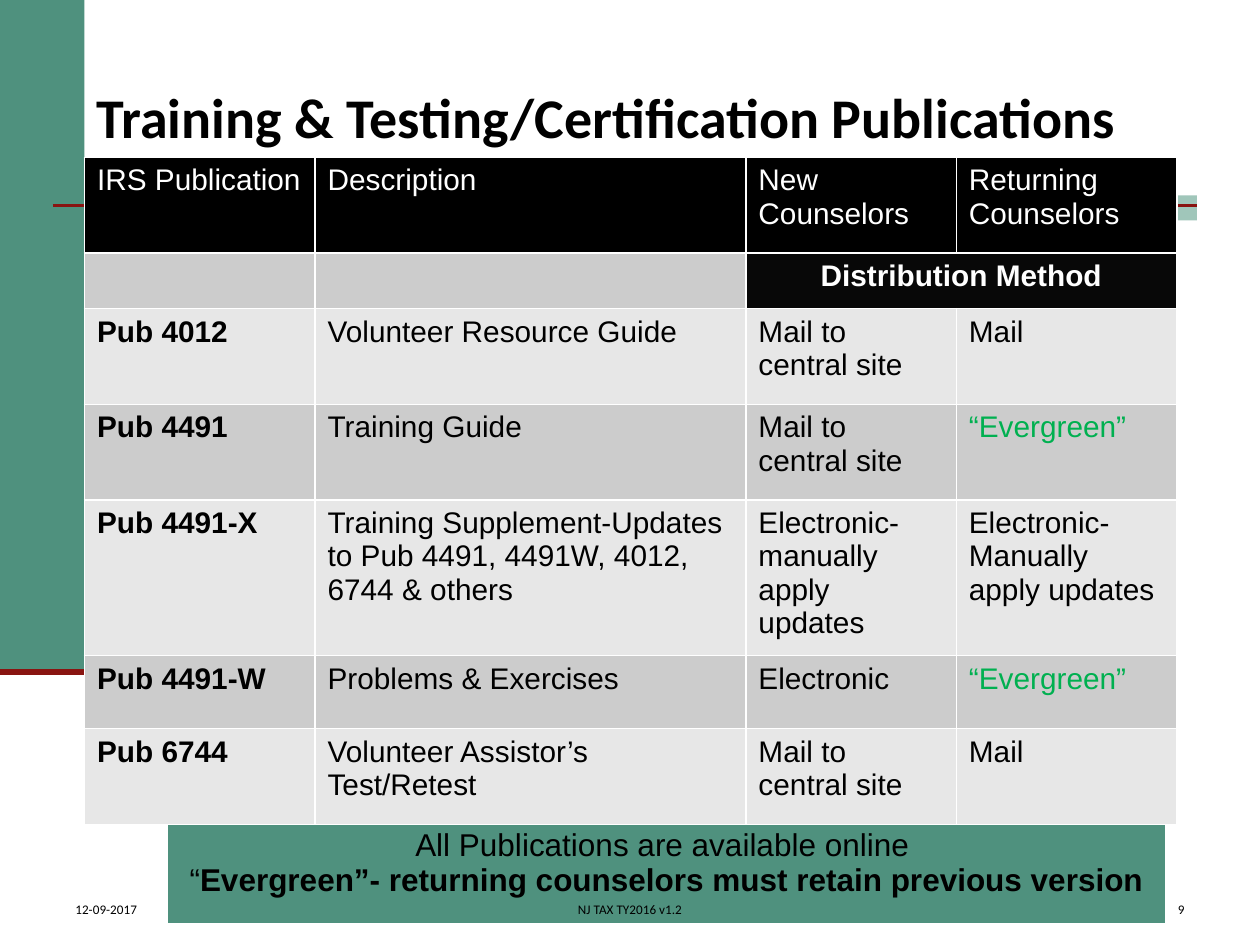
from lxml import etree
from pptx import Presentation
from pptx.dml.color import RGBColor
from pptx.enum.shapes import MSO_CONNECTOR, MSO_SHAPE
from pptx.enum.text import MSO_ANCHOR, PP_ALIGN
from pptx.oxml import parse_xml
from pptx.oxml.ns import nsdecls, qn
from pptx.util import Inches, Pt

LEFT, CENTER, RIGHT = PP_ALIGN.LEFT, PP_ALIGN.CENTER, PP_ALIGN.RIGHT
MIDDLE, BOTTOM = MSO_ANCHOR.MIDDLE, MSO_ANCHOR.BOTTOM
BLACK, WHITE, GREEN = "000000", "FFFFFF", "4F917E"
EVERGREEN, DARK_GRAY, LIGHT_GRAY = "00B050", "CCCCCC", "E7E7E7"


def color(value):
    return RGBColor.from_string(value)


def write(frame, lines, size, ink=BLACK, font="Arial", align=LEFT):
    """Each line is a list of (text, bold) runs."""
    frame.word_wrap = True
    for index, line in enumerate(lines):
        para = frame.paragraphs[0] if index == 0 else frame.add_paragraph()
        para.alignment = align
        for text, bold in line:
            span = para.add_run()
            span.text = text
            span.font.size, span.font.name, span.font.bold = Pt(size), font, bold
            span.font.color.rgb = color(ink)


deck = Presentation()
deck.slide_width, deck.slide_height = Inches(10), Inches(7.5)
page = deck.slides.add_slide(deck.slide_layouts[6])

# Side band and accent block
for left, top, width, height, fill in [
    (0, 0, 0.67, 5.33, GREEN),
    (7.5, 1.55, 2, 0.2, "A0C6BA"),
]:
    block = page.shapes.add_shape(
        MSO_SHAPE.RECTANGLE, Inches(left), Inches(top), Inches(width), Inches(height))
    block.shadow.inherit = False
    block.fill.solid()
    block.fill.fore_color.rgb = color(fill)
    block.line.fill.background()

# Red rules
for start, end, y, weight in [(0.42, 9.5, 1.63, 1.5), (0, 0.67, 5.33, 3.5)]:
    rule = page.shapes.add_connector(
        MSO_CONNECTOR.STRAIGHT, Inches(start), Inches(y), Inches(end), Inches(y))
    rule.line.color.rgb = color("891411")
    rule.line.width = Pt(weight)
    etree.SubElement(rule._element.spPr, qn("a:effectLst"))

# Title
title = page.shapes.add_textbox(Inches(0.67), Inches(0.3), Inches(8.83), Inches(1.25))
title.text_frame.vertical_anchor = MIDDLE
write(title.text_frame, [[("Training & Testing/Certification Publications", True)]],
      32, font="Calibri")

# Tables: the note below, then the publications
note = page.shapes.add_table(
    1, 1, Inches(1.33), Inches(6.52), Inches(7.92), Inches(0.81)).table
columns = [1.83, 3.42, 1.67, 1.75]
heights = [0.76, 0.44, 0.76, 0.76, 1.09, 0.58, 0.76]
grid = page.shapes.add_table(
    len(heights), len(columns), Inches(0.67), Inches(1.25),
    Inches(sum(columns)), Inches(sum(heights))).table
for column, width in zip(grid.columns, columns):
    column.width = Inches(width)
for row, height in zip(grid.rows, heights):
    row.height = Inches(height)

# White borders on every cell
for table in (note, grid):
    for cell in table.iter_cells():
        for side in ("lnL", "lnR", "lnT", "lnB"):
            cell._tc.get_or_add_tcPr().append(parse_xml(
                f'<a:{side} {nsdecls("a")} w="12700"><a:solidFill>'
                f'<a:srgbClr val="{WHITE}"/></a:solidFill></a:{side}>'))
        cell.fill.solid()
        cell.fill.fore_color.rgb = color(GREEN)

write(note.cell(0, 0).text_frame, [
    [("All Publications are available online ", False)],
    [("“", False), ("Evergreen”- returning counselors must retain previous version", True)],
], 18, align=CENTER)

# Publication rows; a line break starts a new paragraph
rows = [
    ("IRS Publication", "Description", "New Counselors", "Returning\nCounselors"),
    ("", "", "Distribution Method", ""),
    ("Pub 4012", "Volunteer Resource Guide", "Mail to central site", "Mail"),
    ("Pub 4491", "Training Guide", "Mail to central site", "“Evergreen”"),
    ("Pub 4491-X", "Training Supplement-Updates to Pub 4491, 4491W, 4012, 6744 & others",
     "Electronic-manually apply updates", "Electronic-Manually apply updates"),
    ("Pub 4491-W", "Problems & Exercises", "Electronic", "“Evergreen”"),
    ("Pub 6744", "Volunteer Assistor’s Test/Retest", "Mail to central site", "Mail"),
]
grid.cell(1, 2).merge(grid.cell(1, 3))
for r, row in enumerate(rows):
    for c, text in enumerate(row):
        cell = grid.cell(r, c)
        distribution = r == 1 and c >= 2
        if r == 0:
            fill = BLACK
        elif distribution:
            fill = "080808"
        else:
            fill = DARK_GRAY if r % 2 else LIGHT_GRAY
        cell.fill.fore_color.rgb = color(fill)
        if not text:
            continue
        ink = WHITE if r < 2 else EVERGREEN if "Evergreen" in text else BLACK
        bold = distribution or (r > 1 and c == 0)
        write(cell.text_frame, [[(line, bold)] for line in text.split("\n")],
              17, ink, align=CENTER if distribution else LEFT)

# Footer
for left, width, text, align in [
    (3.31, 3.38, "NJ TAX TY2016 v1.2", CENTER),
    (7.42, 2.08, "9", RIGHT),
    (0.5, 2.17, "12-09-2017", LEFT),
]:
    box = page.shapes.add_textbox(Inches(left), Inches(7), Inches(width), Inches(0.33))
    box.text_frame.vertical_anchor = BOTTOM
    write(box.text_frame, [[(text, False)]], 7.5, font="Calibri", align=align)

deck.save("out.pptx")
